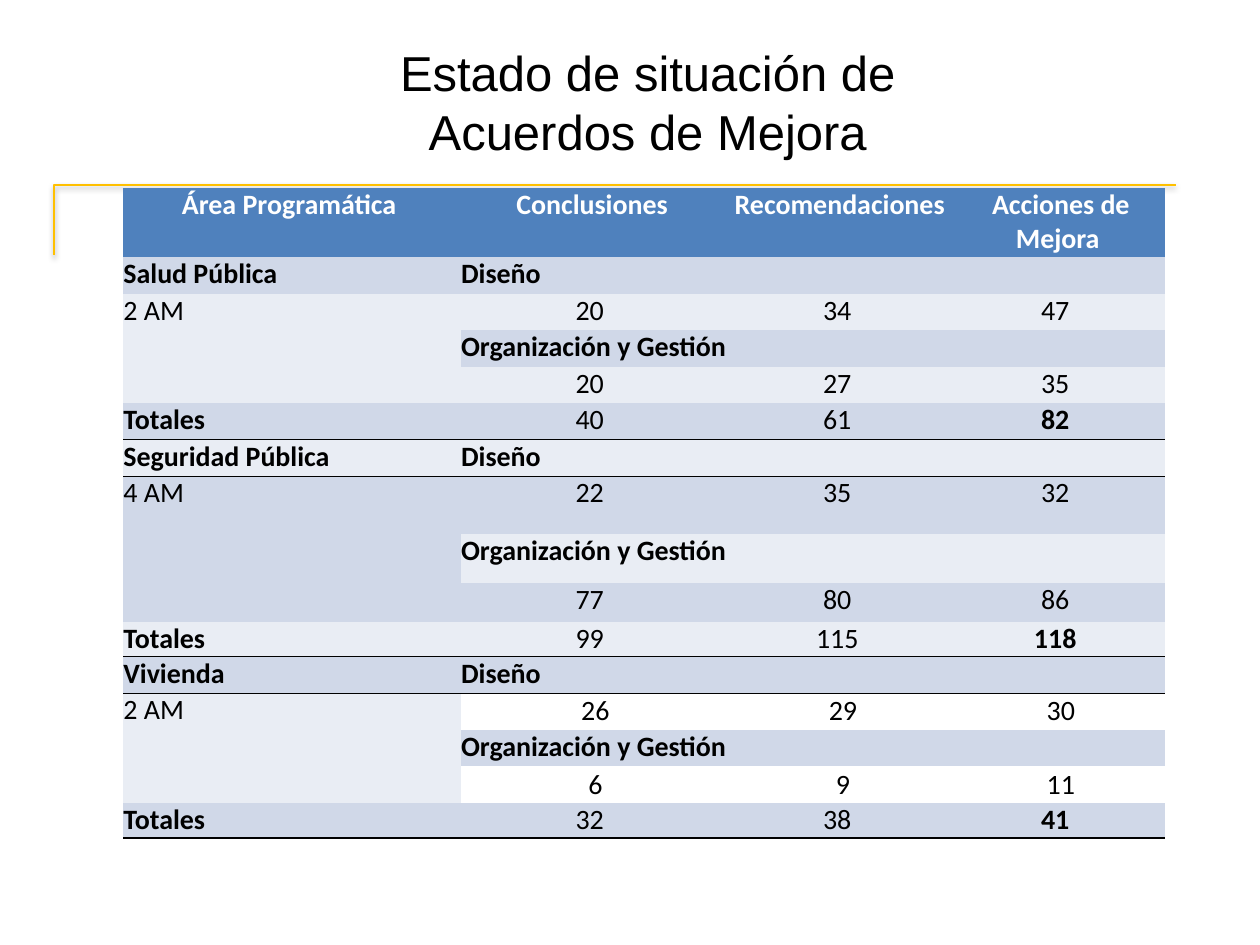
"""Build a slide with a table of improvement agreements by programme area."""
from lxml import etree
from pptx import Presentation, util as u
from pptx.dml import color
from pptx.enum import text
from pptx.oxml import ns

TITLE = "Estado de situación de Acuerdos de Mejora"
HEADS = ["Área Programática ", "Conclusiones ", "Recomendaciones ", "Acciones de Mejora "]
PARTS = ["Diseño", "Organización y Gestión"]
AREAS = [
    dict(name="Salud Pública", count="2 AM", vals=[(20, 34, 47), (20, 27, 35)],
         total=(40, 61, 82), line=0.5),
    dict(name="Seguridad Pública", count="4 AM", vals=[(22, 35, 32), (77, 80, 86)],
         total=(99, 115, 118), line=0.5),
    dict(name="Vivienda", count="2 AM", vals=[(26, 29, 30), (6, 9, 11)],
         total=(32, 38, 41), line=1, plain=True),
]
COLS = [2.68, 2.13, 1.8, 1.66]
ROWS = [0.55] + [0.29] * 6 + [0.46, 0.39, 0.31, 0.27] + [0.29] * 4 + [0.28]
BLUE, DARK, PALE = "4F81BD", "D0D8E8", "E9EDF4"
BLACK, WHITE, GOLD = "000000", "FFFFFF", "FFC000"
MID, LEFT = text.PP_ALIGN.CENTER, text.PP_ALIGN.LEFT
TOP, BASE = text.MSO_ANCHOR.TOP, text.MSO_ANCHOR.BOTTOM
NONE = "{2D5ABB26-0587-4C30-8999-92F81FD0307C}"


def rgb(code):
    """Turn a hex string into a colour."""
    return color.RGBColor.from_string(code)


def style(para, hue=BLACK, align=LEFT, **form):
    """Set the alignment and font of a paragraph."""
    para.alignment = align
    para.font.color.rgb = rgb(hue)
    for key, val in form.items():
        setattr(para.font, key, val)


def put(cell, words, fill, bold=False, align=LEFT, hue=BLACK, pad=0, anchor=TOP):
    """Write and format one table cell."""
    cell.text = str(words)
    form = dict(margin_left=0, margin_top=0, margin_bottom=0,
                margin_right=u.Inches(pad), vertical_anchor=anchor)
    for key, val in form.items():
        setattr(cell, key, val)
    if fill:
        cell.fill.solid()
        cell.fill.fore_color.rgb = rgb(fill)
    else:
        cell.fill.background()
    style(cell.text_frame.paragraphs[0], hue, align,
          name="Calibri", size=u.Pt(16), bold=bold)


def rule(cell, side, width):
    """Draw a black border on one side of a cell."""
    props = cell._tc.get_or_add_tcPr()
    line = etree.Element(ns.qn("a:ln" + side), w=str(u.Pt(width)))
    fill = etree.SubElement(line, ns.qn("a:solidFill"))
    etree.SubElement(fill, ns.qn("a:srgbClr"), val=BLACK)
    props.insert(0, line)


def frame(slide):
    """Draw the gold corner line with its soft shadow."""
    path = slide.shapes.build_freeform(u.Inches(0.43), u.Inches(2.02))
    path.add_line_segments([(u.Inches(x), u.Inches(1.47)) for x in (0.43, 9.33)], close=False)
    shape = path.convert_to_shape()
    shape.fill.background()
    shape.line.color.rgb = rgb(GOLD)
    shape.line.width = u.Pt(1)
    shape.shadow.inherit = False
    effect = shape._element.spPr.find(ns.qn("a:effectLst"))
    shade = etree.SubElement(effect, ns.qn("a:outerShdw"), blurRad=str(u.Pt(3.1)),
                             dist=str(u.Pt(1.6)), dir="5400000", rotWithShape="0")
    tint = etree.SubElement(shade, ns.qn("a:srgbClr"), val=BLACK)
    etree.SubElement(tint, ns.qn("a:alpha"), val="38000")


def block(table, top, area, band, body):
    """Fill the six rows of one programme area."""
    put(table.cell(top, 0), area["name"], band, True)
    put(table.cell(top + 1, 0), area["count"], body)
    table.cell(top + 1, 0).merge(table.cell(top + 3, 0))
    plain = area.get("plain")
    anchors = (text.MSO_ANCHOR.MIDDLE, BASE) if plain else (TOP, TOP)
    for i, (part, vals) in enumerate(zip(PARTS, area["vals"])):
        row = top + 2 * i
        put(table.cell(row, 1), part, band, True)
        table.cell(row, 1).merge(table.cell(row, 3))
        for col, val in enumerate(vals, 1):
            put(table.cell(row + 1, col), val, None if plain else body, align=MID,
                pad=0 if plain else 0.09, anchor=anchors[i])
    end = top + 5 - 1
    put(table.cell(end, 0), "Totales", band, True)
    for col, val in enumerate(area["total"], 1):
        put(table.cell(end, col), val, band, col == 3, MID, pad=0.09)
    for col in range(len(COLS)):
        rule(table.cell(end, col), "B", area["line"])
        if top > 1:
            rule(table.cell(top, col), "T", 0.5)


def grid(slide):
    """Add the table and fill it area by area."""
    spot = [u.Inches(n) for n in (0.98, 1.49, sum(COLS), sum(ROWS))]
    table = slide.shapes.add_table(len(ROWS), len(COLS), *spot).table
    table._tbl.tblPr[0].text = NONE
    table.horz_banding = False
    for col, wide in zip(table.columns, COLS):
        col.width = u.Inches(wide)
    for row, high in zip(table.rows, ROWS):
        row.height = u.Inches(high)
    for col, head in enumerate(HEADS):
        put(table.cell(0, col), head, BLUE, True, MID, WHITE)
    for i, area in enumerate(AREAS):
        pair = (PALE, DARK) if i % 2 else (DARK, PALE)
        block(table, 1 + 5 * i, area, *pair)


def main():
    """Build and save the slide."""
    deck = Presentation()
    deck.slide_width, deck.slide_height = u.Inches(10), u.Inches(7.5)
    slide = deck.slides.add_slide(deck.slide_layouts[6])
    frame(slide)
    grid(slide)
    spot = [u.Inches(n) for n in (2.64, 0.29, 5, 1.04)]
    box = slide.shapes.add_textbox(*spot).text_frame
    box.word_wrap = True
    box.text = TITLE
    style(box.paragraphs[0], align=MID, name="Arial", size=u.Pt(28))
    deck.save("out.pptx")


if __name__ == "__main__":
    main()
